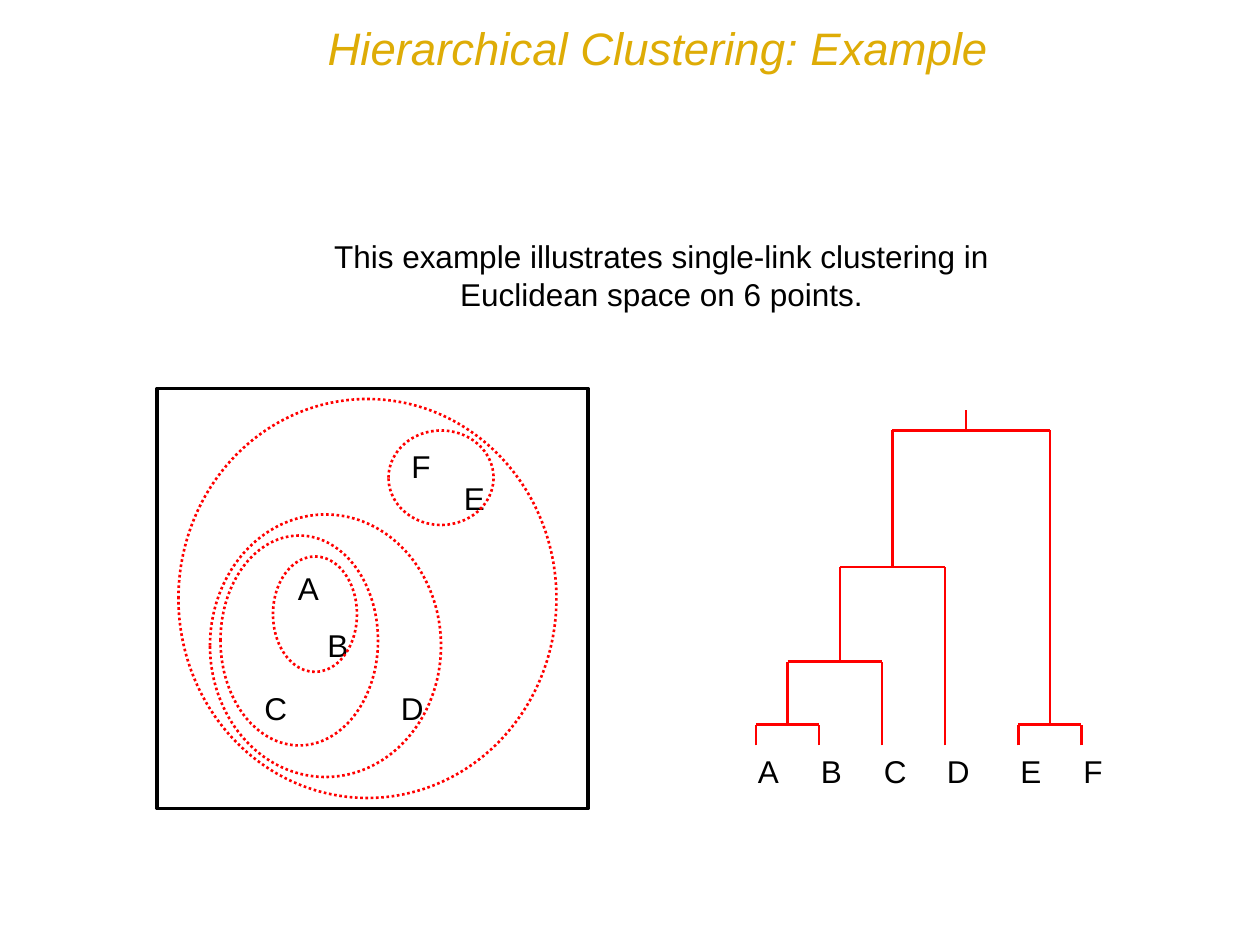
from lxml import etree
from pptx import Presentation
from pptx.dml.color import RGBColor
from pptx.enum.dml import MSO_LINE
from pptx.enum.shapes import MSO_CONNECTOR, MSO_SHAPE
from pptx.enum.text import MSO_ANCHOR, PP_ALIGN
from pptx.oxml.ns import qn
from pptx.util import Pt

PX = 914400 // 120
BLACK = RGBColor(0x00, 0x00, 0x00)
RED = RGBColor(0xFF, 0x00, 0x00)
GOLD = RGBColor(0xDE, 0xAC, 0x06)
FONT = "Arial"
RECT, OVAL = MSO_SHAPE.RECTANGLE, MSO_SHAPE.OVAL
STRAIGHT = MSO_CONNECTOR.STRAIGHT
DOTTED = MSO_LINE.ROUND_DOT
LEFT, CENTER = PP_ALIGN.LEFT, PP_ALIGN.CENTER
MIDDLE = MSO_ANCHOR.MIDDLE

POINTS = [("A", 122, 166), ("B", 150, 220), ("E", 280, 80),
          ("F", 230, 50), ("C", 90, 280), ("D", 220, 280)]
CLUSTERS = [(110, 160, 80, 110), (220, 40, 100, 90), (60, 140, 150, 200),
            (50, 120, 220, 250), (20, 10, 360, 380)]
LEAVES = {"A": 0, "B": 60, "C": 120, "D": 180, "E": 250, "F": 310}
LEAF_Y = 320
MERGES = [(0, LEAF_Y, 60, LEAF_Y, 300), (250, LEAF_Y, 310, LEAF_Y, 300),
          (30, 300, 120, LEAF_Y, 240), (80, 240, 180, LEAF_Y, 150),
          (130, 150, 280, 300, 20)]
ROOT_X, ROOT_Y = 200, 20


def px(*values):
    return [v * PX for v in values]


def format_text(tf, size, color, align):
    tf.word_wrap = True
    tf.vertical_anchor = MIDDLE
    p = tf.paragraphs[0]
    p.alignment = align
    font = p.runs[0].font
    font.name, font.size = FONT, Pt(size)
    font.color.rgb = color
    return font


def add_text(s, text, x, y, w, h):
    tf = s.shapes.add_textbox(*px(x, y, w, h)).text_frame
    tf.text = text
    format_text(tf, 18, BLACK, CENTER)


def add_label(s, text, x, y):
    add_text(s, text, x, y, 24, 48)


def add_outline(s, kind, box, color, width, dash=None):
    sp = s.shapes.add_shape(kind, *px(*box))
    sp.shadow.inherit = False
    sp.fill.background()
    sp.line.color.rgb = color
    sp.line.width = Pt(width)
    sp.line.dash_style = dash


def add_line(s, x1, y1, x2, y2):
    line = s.shapes.add_connector(STRAIGHT, *px(x1, y1, x2, y2))
    line.line.color.rgb = RED
    line.line.width = Pt(1.5)
    etree.SubElement(line._element.spPr, qn("a:effectLst"))


def add_title(s, x, y, w, h):
    title = s.shapes.title
    title.left, title.top, title.width, title.height = px(x, y, w, h)
    title.text_frame.text = "Hierarchical Clustering: Example"
    format_text(title.text_frame, 26, GOLD, LEFT).italic = True


def add_cluster_map(s, x, y, w, h):
    add_outline(s, RECT, (x, y, w, h), BLACK, 2.25)
    for name, dx, dy in POINTS:
        add_label(s, name, x + dx, y + dy)
    for dx, dy, cw, ch in CLUSTERS:
        add_outline(s, OVAL, (x + dx, y + dy, cw, ch), RED, 1.5, DOTTED)


def add_dendrogram(s, x, y):
    for name, dx in LEAVES.items():
        add_label(s, name, x + dx - 10, y + LEAF_Y)
    for left, left_y, right, right_y, top in MERGES:
        add_line(s, x + left, y + left_y, x + left, y + top)
        add_line(s, x + right, y + right_y, x + right, y + top)
        add_line(s, x + left, y + top, x + right, y + top)
    add_line(s, x + ROOT_X, y + ROOT_Y, x + ROOT_X, y)


def main():
    prs = Presentation()
    prs.slide_width, prs.slide_height = px(1200, 900)
    s = prs.slides.add_slide(prs.slide_layouts[5])
    add_title(s, 300, 0, 847, 90)
    add_cluster_map(s, 150, 370, 410, 400)
    add_dendrogram(s, 720, 390)
    add_text(s, "This example illustrates single-link clustering in "
                "Euclidean space on 6 points.", 270, 220, 720, 84)
    prs.save("out.pptx")


if __name__ == "__main__":
    main()
